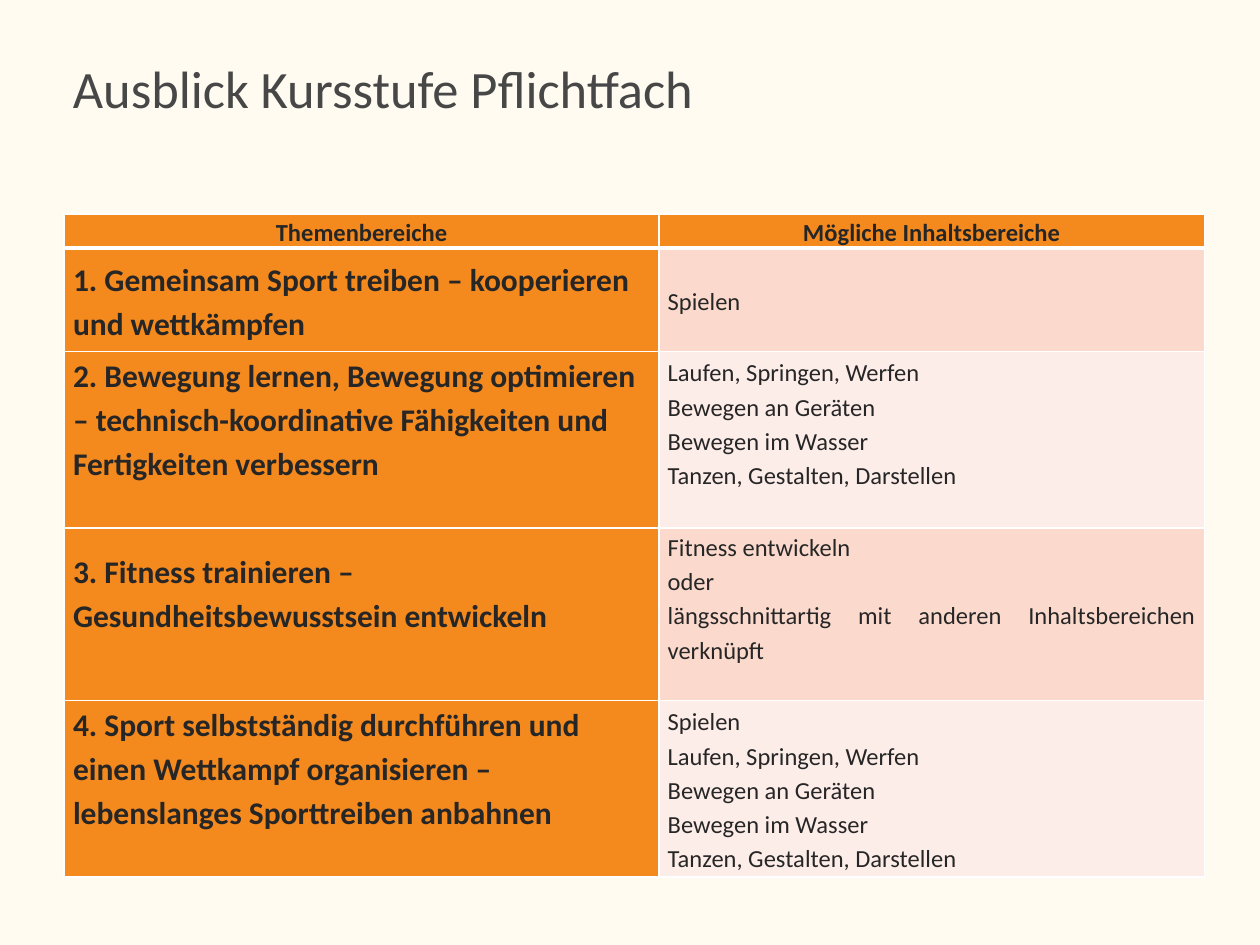
from lxml import etree
from pptx import Presentation
from pptx.dml.color import RGBColor
from pptx.enum import text
from pptx.oxml import ns
from pptx.util import Inches, Pt

TITLE = "Ausblick Kursstufe Pflichtfach"
HEADERS = ("Themenbereiche", "Mögliche Inhaltsbereiche")
MOVEMENT = ["Laufen, Springen, Werfen", "Bewegen an Geräten",
            "Bewegen im Wasser", "Tanzen, Gestalten, Darstellen"]
TOPICS = [
    {"topic": "1. Gemeinsam Sport treiben – kooperieren und wettkämpfen",
     "contents": ["Spielen"], "height": 0.82, "gaps": (0, 0)},
    {"topic": "2. Bewegung lernen, Bewegung optimieren – technisch-koordinative "
              "Fähigkeiten und Fertigkeiten verbessern",
     "contents": MOVEMENT, "height": 1.4, "gaps": (0.35, 0.27)},
    {"topic": "3. Fitness trainieren – Gesundheitsbewusstsein entwickeln",
     "contents": ["Fitness entwickeln", "oder",
                  "längsschnittartig mit anderen Inhaltsbereichen verknüpft"],
     "height": 1.37, "gaps": (0.35, 0.27)},
    {"topic": "4. Sport selbstständig durchführen und einen Wettkampf "
              "organisieren – lebenslanges Sporttreiben anbahnen",
     "contents": ["Spielen"] + MOVEMENT, "height": 1.4, "gaps": (0.35, 0)},
]
HEADER_HEIGHT = 0.27
COLUMNS = (4.72, 4.33)
THEME = {
    "background": "FFFBF0", "accent": "F4891E", "bands": ("FBDACD", "FDEDE8"),
    "border": "FFFFFF", "thin": 1, "thick": 3, "inset": 0.07, "spacing": 1.15,
    "title": {"size": 30, "color": "474747"},
    "header": {"size": 14, "bold": True, "color": "262626"},
    "topic": {"size": 18, "bold": True, "color": "262626"},
    "content": {"size": 14, "bold": False, "color": "262626"},
}


def write(p, words, style):
    r = p.add_run()
    r.text = words
    r.font.color.rgb = RGBColor.from_string(style["color"])
    values = {"name": "Calibri", "size": Pt(style["size"]),
              "bold": style.get("bold", False)}
    for name, value in values.items():
        setattr(r.font, name, value)


def add_borders(cell, top, bottom):
    widths = {"lnL": THEME["thin"], "lnR": THEME["thin"], "lnT": top, "lnB": bottom}
    tc_pr = cell._tc.get_or_add_tcPr()
    for i, (tag, width) in enumerate(widths.items()):
        line = etree.Element(ns.qn(f"a:{tag}"), w=str(Pt(width)))
        fill = etree.SubElement(line, ns.qn("a:solidFill"))
        etree.SubElement(fill, ns.qn("a:srgbClr"), val=THEME["border"])
        tc_pr.insert(i, line)


def fill_cell(cell, lines, style, align, color, anchor, gap=0):
    inset = Inches(THEME["inset"])
    values = {"margin_left": inset, "margin_right": inset, "margin_top": 0,
              "margin_bottom": Inches(gap), "vertical_anchor": anchor}
    for name, value in values.items():
        setattr(cell, name, value)
    cell.fill.solid()
    cell.fill.fore_color.rgb = RGBColor.from_string(color)
    tf = cell.text_frame
    for i, words in enumerate(lines):
        p = tf.add_paragraph() if i else tf.paragraphs[0]
        p.alignment = align
        p.line_spacing = THEME["spacing"]
        write(p, words, style)


def add_title(s):
    sp = s.shapes.add_textbox(Inches(0.48), Inches(0.32), Inches(9.19), Inches(0.75))
    tf = sp.text_frame
    tf.word_wrap = True
    tf.vertical_anchor = text.MSO_ANCHOR.MIDDLE
    write(tf.paragraphs[0], TITLE, THEME["title"])


def add_topics(s):
    heights = [HEADER_HEIGHT] + [row["height"] for row in TOPICS]
    table = s.shapes.add_table(len(heights), len(COLUMNS), Inches(0.51), Inches(1.7),
                               Inches(sum(COLUMNS)), Inches(sum(heights))).table
    for column, width in zip(table.columns, COLUMNS):
        column.width = Inches(width)
    for row, height in zip(table.rows, heights):
        row.height = Inches(height)

    align, anchor = text.PP_ALIGN, text.MSO_ANCHOR
    for j, header in enumerate(HEADERS):
        fill_cell(table.cell(0, j), [header], THEME["header"], align.CENTER,
                  THEME["accent"], anchor.TOP)
    for i, row in enumerate(TOPICS, 1):
        band = THEME["bands"][(i - 1) % 2]
        fill_cell(table.cell(i, 0), [row["topic"]], THEME["topic"], align.LEFT,
                  THEME["accent"], anchor.MIDDLE, row["gaps"][0])
        fill_cell(table.cell(i, 1), row["contents"], THEME["content"], align.JUSTIFY,
                  band, anchor.MIDDLE, row["gaps"][1])
    for i in range(len(heights)):
        for j in range(len(COLUMNS)):
            add_borders(table.cell(i, j),
                        THEME["thick"] if i == 1 else THEME["thin"],
                        THEME["thick"] if i == 0 else THEME["thin"])


def main():
    prs = Presentation()
    prs.slide_width, prs.slide_height = Inches(10), Inches(7.5)
    s = prs.slides.add_slide(prs.slide_layouts[6])
    s.background.fill.solid()
    s.background.fill.fore_color.rgb = RGBColor.from_string(THEME["background"])
    add_title(s)
    add_topics(s)
    prs.save("out.pptx")


if __name__ == "__main__":
    main()
